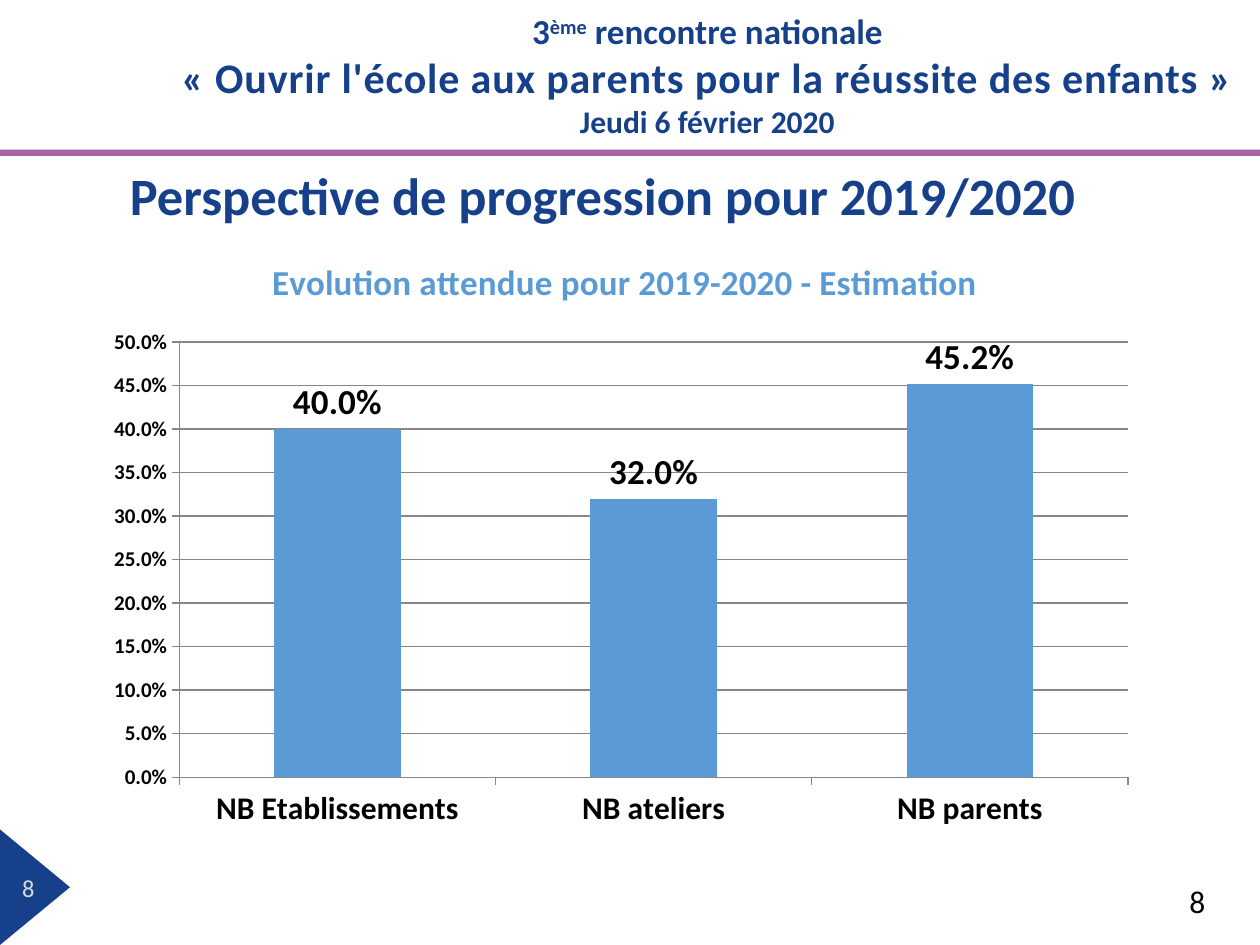
from lxml.etree import fromstring
from pptx import Presentation
from pptx.chart.data import CategoryChartData
from pptx.dml.color import RGBColor
from pptx.enum.chart import XL_CHART_TYPE, XL_LABEL_POSITION, XL_TICK_MARK
from pptx.enum.shapes import MSO_SHAPE
from pptx.enum.text import MSO_ANCHOR, PP_ALIGN
from pptx.util import Pt

# Content
NAVY, MAUVE, BLUE = "16408A", "A863A4", "5B9BD5"
BLACK, PALE, GREY = "000000", "D9D9D9", "878787"
FACE = "Calibri"
# Each header line: runs of text and extra font attributes, then the size
HEAD = [
    ([("3", {}), ("ème", {"baseline": "30000"}), (" rencontre nationale", {})], 20),
    ([("« Ouvrir l'école aux parents pour la réussite des enfants »",
       {"spc": "50"})], 24),
    ([("Jeudi 6 février 2020", {})], 18),
]
TITLE = "Perspective de progression pour 2019/2020"
PAGE = "8"
NAME = "Evolution attendue pour 2019-2020 - Estimation"
DATA = {"NB Etablissements": 0.4, "NB ateliers": 0.32, "NB parents": 0.452}
PLOT = {"x": 0.075, "y": 0.183, "w": 0.905, "h": 0.723}
WIDE, HIGH = 720, 540


def paint(part, tint):
    part.solid()
    part.fore_color.rgb = RGBColor.from_string(tint)


def style(font, size, tint, bold=False):
    font.name, font.size, font.bold = FACE, Pt(size), bold
    font.color.rgb = RGBColor.from_string(tint)


def add_run(para, text, size, tint, bold=False, extra=None):
    run = para.add_run()
    run.text = text
    style(run.font, size, tint, bold)
    for key, val in (extra or {}).items():
        run.font._element.set(key, val)


def add_box(left, top, width, height, anchor=MSO_ANCHOR.TOP):
    box = slide.shapes.add_textbox(Pt(left), Pt(top), Pt(width), Pt(height))
    box.text_frame.word_wrap = True
    box.text_frame.vertical_anchor = anchor
    return box.text_frame


def plain(shape, tint):
    paint(shape.fill, tint)
    shape.line.fill.background()
    shape.shadow.inherit = False


deck = Presentation()
deck.slide_width, deck.slide_height = Pt(WIDE), Pt(HIGH)
slide = deck.slides.add_slide(deck.slide_layouts[5])

# Header and its rule
frame = add_box(88.5, 0, 631.5, 85.7, MSO_ANCHOR.MIDDLE)
for num, (runs, size) in enumerate(HEAD):
    para = frame.add_paragraph() if num else frame.paragraphs[0]
    para.alignment = PP_ALIGN.CENTER
    for text, extra in runs:
        add_run(para, text, size, NAVY, True, extra)
rule = slide.shapes.add_shape(MSO_SHAPE.RECTANGLE, 0, Pt(85.5), Pt(WIDE), Pt(3.6))
plain(rule, MAUVE)

# Corner arrow with page number
path = slide.shapes.build_freeform(0, 474.5, scale=Pt(1))
path.add_line_segments([(0, HIGH), (39.5, 507), (0, 474.5)], close=True)
plain(path.convert_to_shape(), NAVY)
frame = add_box(-3.6, 494.6, 39.6, 25.2, MSO_ANCHOR.MIDDLE)
frame.margin_left = frame.margin_right = Pt(2.9)
frame.margin_top = frame.margin_bottom = Pt(2.9)
frame.paragraphs[0].alignment = PP_ALIGN.CENTER
add_run(frame.paragraphs[0], PAGE, 14, PALE)
frame = add_box(672.5, 500.4, 43.9, 28.8)
add_run(frame.paragraphs[0], PAGE, 18, BLACK)

# Title
title = slide.shapes.title
title.left, title.top, title.width, title.height = Pt(67), Pt(89.3), Pt(590), Pt(44)
title.text_frame.word_wrap = True
title.text_frame.vertical_anchor = MSO_ANCHOR.TOP
para = title.text_frame.paragraphs[0]
para.alignment = PP_ALIGN.LEFT
add_run(para, TITLE, 30, NAVY, True)

# Chart
data = CategoryChartData(number_format="0.0%")
data.categories = list(DATA)
data.add_series("Series 1", list(DATA.values()))
chart = slide.shapes.add_chart(XL_CHART_TYPE.COLUMN_CLUSTERED, Pt(57.6), Pt(132.5),
                               Pt(599), Pt(344), data).chart
style(chart.font, 10, BLACK)
chart.has_legend = False
chart.has_title = True
add_run(chart.chart_title.text_frame.paragraphs[0], NAME, 20, BLUE, True)
chart.chart_title.include_in_layout = False

# Axes
for axis, size in ((chart.category_axis, 18), (chart.value_axis, 12)):
    style(axis.tick_labels.font, size, BLACK, True)
    axis.major_tick_mark = XL_TICK_MARK.OUTSIDE
    axis.minor_tick_mark = XL_TICK_MARK.NONE
    paint(axis.format.line.fill, GREY)
    axis.format.line.width = Pt(0.75)
axis = chart.value_axis
axis.minimum_scale, axis.maximum_scale, axis.major_unit = 0, 0.5, 0.05
axis.tick_labels.number_format = "0.0%"
axis.tick_labels.number_format_is_linked = False
axis.has_major_gridlines = True
paint(axis.major_gridlines.format.line.fill, GREY)
axis.major_gridlines.format.line.width = Pt(0.75)

# Bars and labels
plot = chart.plots[0]
plot.gap_width = 150
plot.vary_by_categories = False
paint(plot.series[0].format.fill, BLUE)
marks = plot.series[0].data_labels
marks.show_value = True
marks.number_format, marks.number_format_is_linked = "0.0%", False
marks.position = XL_LABEL_POSITION.OUTSIDE_END
style(marks.font, 20, BLACK, True)

# Fixed inner plot area
space = "http://schemas.openxmlformats.org/drawingml/2006/chart"
rows = '<c:layoutTarget val="inner"/><c:xMode val="edge"/><c:yMode val="edge"/>'
rows += "".join(f'<c:{key} val="{val}"/>' for key, val in PLOT.items())
area = chart._chartSpace.find(f".//{{{space}}}plotArea")
for old in area.findall(f"{{{space}}}layout"):
    area.remove(old)
area.insert(0, fromstring(
    f'<c:layout xmlns:c="{space}"><c:manualLayout>{rows}</c:manualLayout></c:layout>'))

deck.save("out.pptx")
